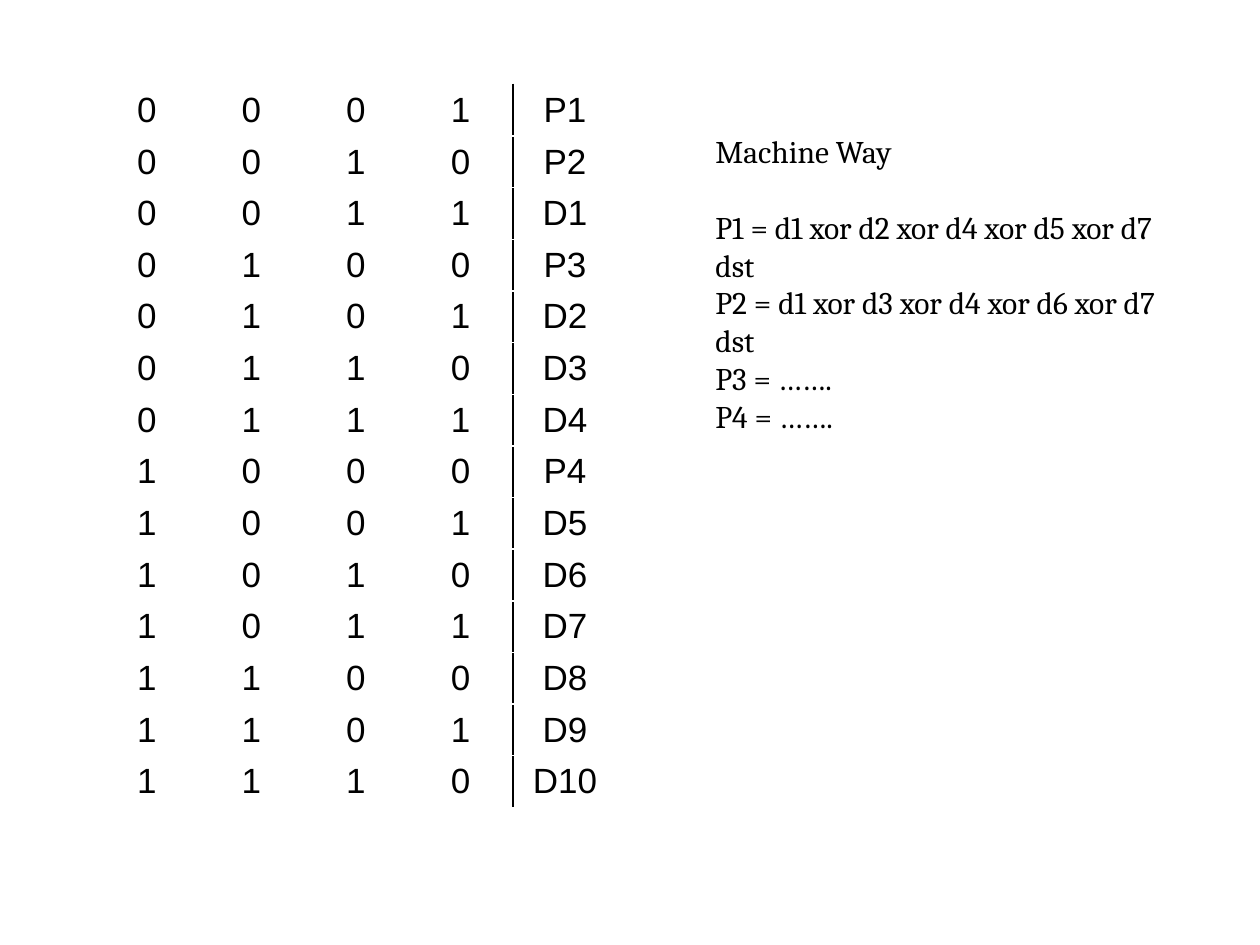
from dataclasses import dataclass
from itertools import count

from lxml import etree
from pptx import Presentation
from pptx import util as u
from pptx.dml.color import RGBColor
from pptx.enum import text
from pptx.oxml import ns


@dataclass(frozen=True)
class Theme:
    ink: str = "000000"
    code_font: str = "Arial"
    code_size: int = 20
    note_font: str = "Cambria"
    note_size: int = 18
    rule_width: int = 1


theme = Theme()


def style_font(font, name, size):
    for key, value in {"name": name, "size": u.Pt(size), "bold": False}.items():
        setattr(font, key, value)
    font.color.rgb = RGBColor.from_string(theme.ink)


def add_border(cell, side):
    """Rule one side of a cell: "L" or "R"."""
    line = etree.Element(ns.qn(f"a:ln{side}"), w=str(u.Pt(theme.rule_width)))
    fill = etree.SubElement(line, ns.qn("a:solidFill"))
    etree.SubElement(fill, ns.qn("a:srgbClr"), val=theme.ink)
    cell._tc.get_or_add_tcPr().insert(0, line)


prs = Presentation()
prs.slide_width, prs.slide_height = u.Inches(10), u.Inches(7.5)
slide = prs.slides.add_slide(prs.slide_layouts[6])

# Hamming positions: four address bits, then the bit stored there.
# Powers of two hold parity bits; the other positions hold data bits.
positions = range(1, 15)
address_bits = 4
parity_number, data_number = count(1), count(1)
code_rows = []
for position in positions:
    is_parity = position & (position - 1) == 0
    label = f"P{next(parity_number)}" if is_parity else f"D{next(data_number)}"
    code_rows.append([*f"{position:0{address_bits}b}", label])

column_width, row_height = u.Inches(0.83), u.Inches(0.41)
code_table = slide.shapes.add_table(
    len(code_rows), address_bits + 1, u.Inches(0.75), u.Inches(0.67),
    column_width * (address_bits + 1), row_height * len(code_rows)).table
for flag, value in {"first_row": False, "horz_banding": False}.items():
    setattr(code_table, flag, value)
for column in code_table.columns:
    column.width = column_width

cell_format = {
    "margin_top": u.Inches(0.03),
    "margin_bottom": u.Inches(0.03),
    "vertical_anchor": text.MSO_ANCHOR.MIDDLE,
}
for row, values in zip(code_table.rows, code_rows):
    row.height = row_height
    for cell, value in zip(row.cells, values):
        for key, setting in cell_format.items():
            setattr(cell, key, setting)
        cell.fill.background()
        cell.text = value
        entry = cell.text_frame.paragraphs[0]
        entry.alignment = text.PP_ALIGN.CENTER
        style_font(entry.runs[0].font, theme.code_font, theme.code_size)
    add_border(row.cells[address_bits - 1], "R")
    add_border(row.cells[address_bits], "L")

# Parity equations
heading = "Machine Way"
equations = [
    "P1 = d1 xor d2 xor d4 xor d5 xor d7 dst",
    "P2 = d1 xor d3 xor d4 xor d6 xor d7 dst",
    "P3 = …….",
    "P4 = …….",
]
notes = slide.shapes.add_textbox(
    u.Inches(5.58), u.Inches(1), u.Inches(4), u.Inches(3.33)).text_frame
notes.word_wrap = True
notes.text = "\n".join([heading, *equations])
for paragraph in notes.paragraphs:
    style_font(paragraph.runs[0].font, theme.note_font, theme.note_size)
notes.paragraphs[1].space_before = u.Pt(21.6)

prs.save("out.pptx")
